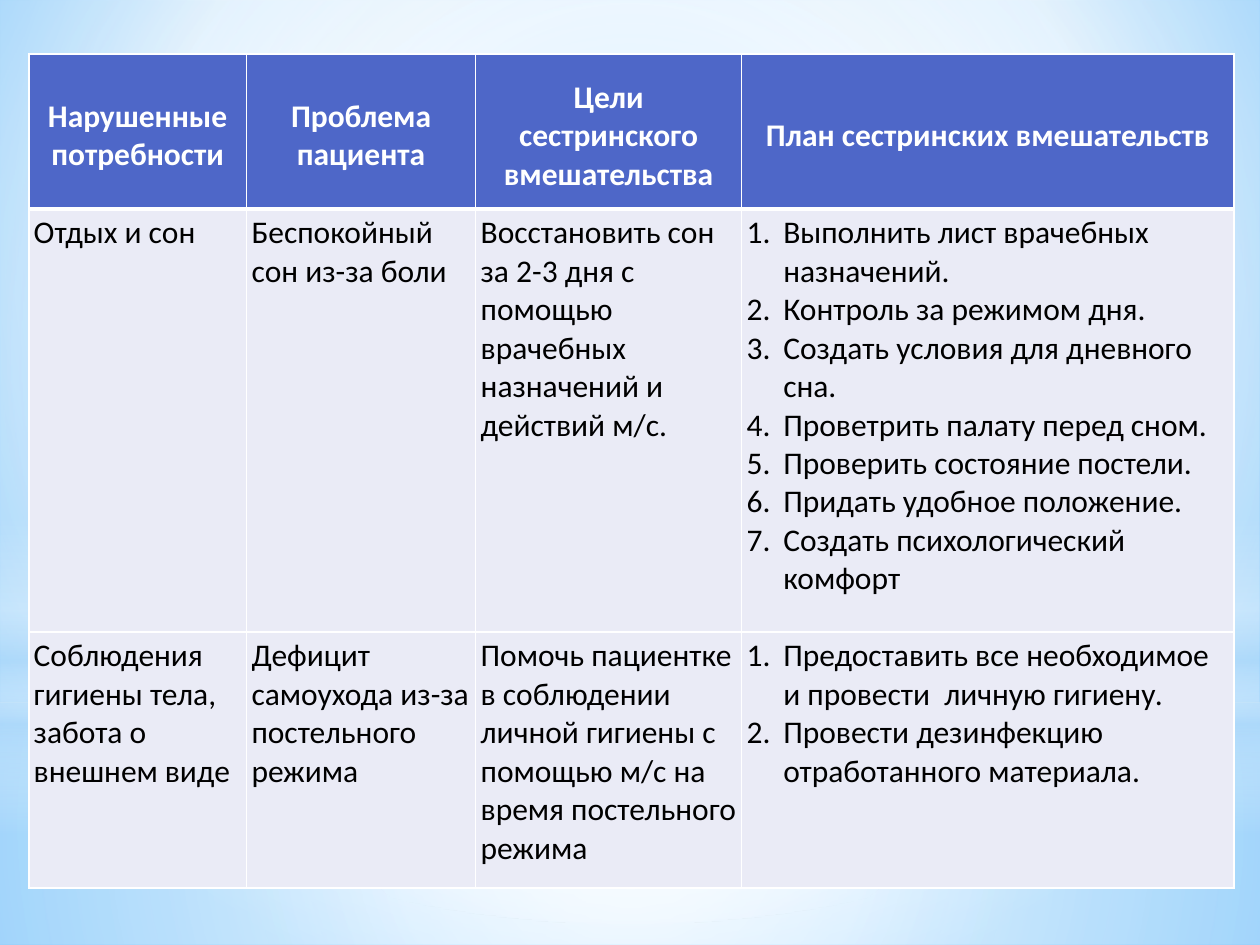
from lxml.etree import SubElement
from pptx import Presentation
from pptx.dml.color import RGBColor
from pptx.enum.shapes import MSO_SHAPE
from pptx.enum.text import MSO_ANCHOR, PP_ALIGN
from pptx.oxml import parse_xml
from pptx.oxml.ns import nsdecls, qn
from pptx.util import Cm, Pt

WHITE = RGBColor(0xFF, 0xFF, 0xFF)
BLACK = RGBColor(0x00, 0x00, 0x00)
HEADER_BLUE = RGBColor(0x4E, 0x67, 0xC8)
PALE_LILAC = RGBColor(0xEA, 0xEB, 0xF6)
HAZE_BLUE = RGBColor(0xB4, 0xDC, 0xFA)
SKY_BLUE = RGBColor(0x9E, 0xD5, 0xFF)
DEEP_SKY = RGBColor(0x5B, 0xB9, 0xFF)


def set_gradient(fill, properties, stops, focus=None):
    """Fill with (position, colour, opacity) stops: circular around focus, or vertical."""
    fill.solid()
    stop_xml = "".join(
        f'<a:gs pos="{position * 1000}"><a:srgbClr val="{colour}">'
        f'<a:alpha val="{opacity * 1000}"/></a:srgbClr></a:gs>'
        for position, colour, opacity in stops)
    if focus:
        sides = " ".join(f'{side}="{share * 1000}"' for side, share in zip("ltrb", focus))
        direction = f'<a:path path="circle"><a:fillToRect {sides}/></a:path>'
    else:
        direction = '<a:lin ang="5400000" scaled="0"/>'
    gradient = parse_xml(f'<a:gradFill {nsdecls("a")} rotWithShape="1">'
                         f'<a:gsLst>{stop_xml}</a:gsLst>{direction}</a:gradFill>')
    properties.replace(properties.find(qn("a:solidFill")), gradient)


def set_borders(cell, widths):
    """Draw white borders, widths in points for left, right, top and bottom."""
    properties = cell._tc.get_or_add_tcPr()
    for place, (side, width) in enumerate(zip("LRTB", widths)):
        properties.insert(place, parse_xml(
            f'<a:ln{side} {nsdecls("a")} w="{Pt(width)}"><a:solidFill>'
            f'<a:srgbClr val="{WHITE}"/></a:solidFill></a:ln{side}>'))


prs = Presentation()
prs.slide_width, prs.slide_height = Cm(25.4), Cm(19.05)
slide = prs.slides.add_slide(prs.slide_layouts[6])

# Sky background and the haze over it
CENTRE = (50, 50, 50, 50)
background_fill = slide.background.fill
background_fill.solid()
set_gradient(background_fill, slide._element.find(".//" + qn("p:bgPr")),
             [(0, SKY_BLUE, 100), (60, WHITE, 100), (100, DEEP_SKY, 100)], (20, 10, 20, 60))

HAZE = [
    (MSO_SHAPE.RECTANGLE, 14.17, 4.88,
     [(0, WHITE, 91), (37, WHITE, 76), (100, HAZE_BLUE, 79)], CENTRE),
    (MSO_SHAPE.RECTANGLE, 0, 14.17,
     [(0, WHITE, 89), (48, WHITE, 62), (100, HAZE_BLUE, 79)], CENTRE),
    (MSO_SHAPE.RECTANGLE, 10.46, 6.35,
     [(0, WHITE, 0), (29, WHITE, 30), (45, HAZE_BLUE, 40), (55, WHITE, 26),
      (65, HAZE_BLUE, 60), (100, WHITE, 0)], None),
    (MSO_SHAPE.OVAL, 4.45, 14.17, [(0, WHITE, 100), (56, WHITE, 0)], CENTRE),
]
for outline, top, height, stops, focus in HAZE:
    haze = slide.shapes.add_shape(outline, 0, Cm(top), prs.slide_width, Cm(height))
    haze.shadow.inherit = False
    haze.line.fill.background()
    set_gradient(haze.fill, haze._element.spPr, stops, focus)

# Nursing care plan: a list in a cell is a numbered list
CARE_PLAN = [
    ["Нарушенные потребности", "Проблема пациента", "Цели сестринского вмешательства",
     "План сестринских вмешательств"],
    ["Отдых и сон", "Беспокойный сон из-за боли",
     "Восстановить сон за 2-3 дня с помощью врачебных назначений и действий м/с.",
     ["Выполнить лист врачебных назначений.", "Контроль за режимом дня.",
      "Создать условия для дневного сна.", "Проветрить палату перед сном.",
      "Проверить состояние постели.", "Придать удобное положение.",
      "Создать психологический комфорт"]],
    ["Соблюдения гигиены тела, забота о внешнем виде",
     "Дефицит самоухода из-за постельного режима",
     "Помочь пациентке в соблюдении личной гигиены с помощью м/с на время "
     "постельного режима",
     ["Предоставить все необходимое и провести  личную гигиену.",
      "Провести дезинфекцию отработанного материала."]],
]
COLUMN_WIDTHS = [4.39, 4.62, 5.36, 9.93]
ROW_HEIGHTS = [3.12, 8.53, 5.16]
NUMBER_INDENT = Cm(0.74)
HEADER_CELL = {"vertical_anchor": MSO_ANCHOR.MIDDLE, "margin_left": Cm(0.18),
               "margin_right": Cm(0.18), "margin_top": Cm(0.18), "margin_bottom": 0}
BODY_CELL = {"vertical_anchor": MSO_ANCHOR.TOP, "margin_left": Cm(0.1),
             "margin_right": Cm(0.1), "margin_top": Cm(0.1), "margin_bottom": 0}

plan = slide.shapes.add_table(
    len(ROW_HEIGHTS), len(COLUMN_WIDTHS), Cm(0.58), Cm(1.09),
    Cm(sum(COLUMN_WIDTHS)), Cm(sum(ROW_HEIGHTS))).table
for column, width in zip(plan.columns, COLUMN_WIDTHS):
    column.width = Cm(width)

for row_index, (row, height, entries) in enumerate(zip(plan.rows, ROW_HEIGHTS, CARE_PLAN)):
    row.height = Cm(height)
    is_header = row_index == 0
    for cell, entry in zip(row.cells, entries):
        for attribute, value in (HEADER_CELL if is_header else BODY_CELL).items():
            setattr(cell, attribute, value)
        cell.fill.solid()
        cell.fill.fore_color.rgb = HEADER_BLUE if is_header else PALE_LILAC
        set_borders(cell, (1, 1, 3 if row_index == 1 else 1, 3 if is_header else 1))

        numbered = isinstance(entry, list)
        cell.text = "\n".join(entry) if numbered else entry
        for paragraph in cell.text_frame.paragraphs:
            paragraph.alignment = PP_ALIGN.CENTER if is_header else PP_ALIGN.LEFT
            font = paragraph.runs[0].font
            for attribute, value in {"name": "Calibri", "size": Pt(18),
                                     "bold": is_header}.items():
                setattr(font, attribute, value)
            font.color.rgb = WHITE if is_header else BLACK
            if numbered:
                properties = paragraph._p.get_or_add_pPr()
                properties.set("marL", str(NUMBER_INDENT))
                properties.set("indent", str(-NUMBER_INDENT))
                SubElement(properties, qn("a:buFont"), typeface="+mj-lt")
                SubElement(properties, qn("a:buAutoNum"), type="arabicPeriod")

prs.save("out.pptx")
